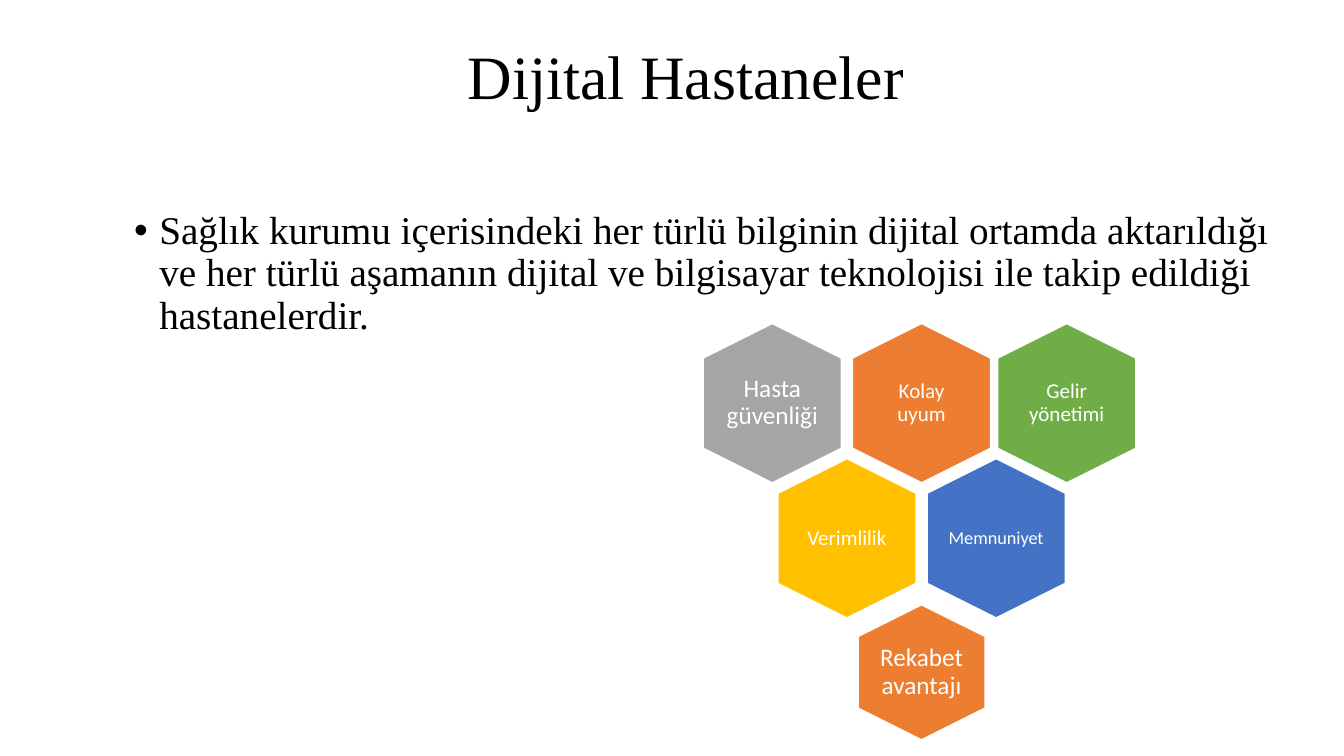
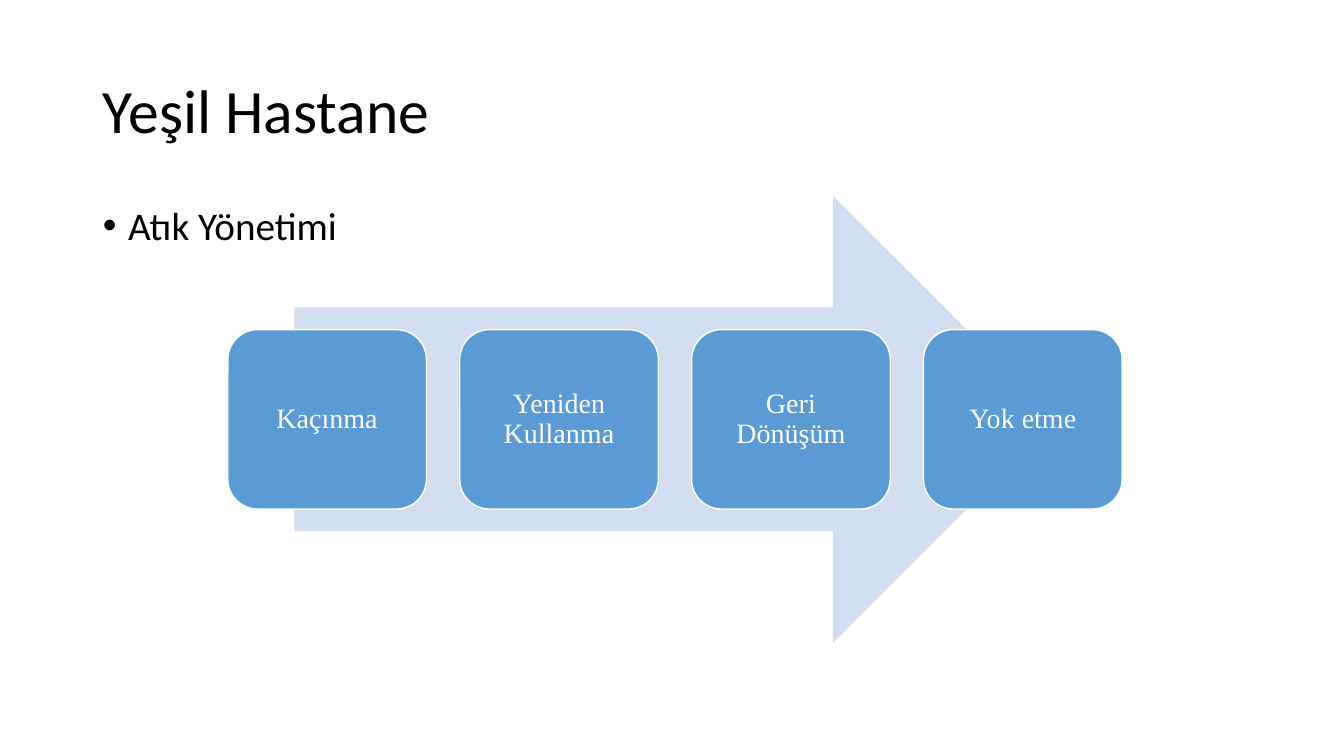
import pptx
import pptx.dml.color
import pptx.enum.shapes
import pptx.enum.text
import pptx.util

Inches = pptx.util.Inches
Pt = pptx.util.Pt
RGBColor = pptx.dml.color.RGBColor
Shape = pptx.enum.shapes.MSO_SHAPE
Align = pptx.enum.text.PP_ALIGN
Anchor = pptx.enum.text.MSO_ANCHOR

BLACK = RGBColor(0x00, 0x00, 0x00)
WHITE = RGBColor(0xFF, 0xFF, 0xFF)
ORANGE = RGBColor(0xED, 0x7D, 0x31)
GRAY = RGBColor(0xA5, 0xA5, 0xA5)
YELLOW = RGBColor(0xFF, 0xC0, 0x00)
BLUE = RGBColor(0x44, 0x72, 0xC4)
GREEN = RGBColor(0x70, 0xAD, 0x47)
STEP_BLUE = RGBColor(0x5B, 0x9B, 0xD5)
PALE_BLUE = RGBColor(0xD2, 0xDE, 0xEF)

SANS = "Calibri"
SERIF = "Times New Roman"

TITLE_SIZE = 44
BODY_SIZE = 28
TITLE_AND_CONTENT = 1


def set_attributes(target, values):
    for name, value in values.items():
        setattr(target, name, value)


class Deck:
    """Holds the shared style and the slide being filled."""

    def __init__(self):
        self.presentation = pptx.Presentation()
        self.presentation.slide_width = Inches(13.33)
        self.presentation.slide_height = Inches(7.5)
        self.slide = None

    def add_slide(self):
        layout = self.presentation.slide_layouts[TITLE_AND_CONTENT]
        self.slide = self.presentation.slides.add_slide(layout)

    def set_text(self, shape, text, font, size, color, align, anchor, inset=None):
        frame = shape.text_frame
        set_attributes(frame, {
            "text": text,
            "word_wrap": True,
            "auto_size": pptx.enum.text.MSO_AUTO_SIZE.NONE,
            "vertical_anchor": anchor,
        })
        if inset is not None:
            for side in ("left", "top", "right", "bottom"):
                setattr(frame, f"margin_{side}", Inches(inset))
        paragraph = frame.paragraphs[0]
        set_attributes(paragraph, {"alignment": align, "line_spacing": 0.9})
        set_attributes(paragraph.runs[0].font, {"name": font, "size": Pt(size)})
        paragraph.runs[0].font.color.rgb = color
        return paragraph

    def place(self, shape, left, top, width, height):
        set_attributes(shape, {
            "left": Inches(left), "top": Inches(top),
            "width": Inches(width), "height": Inches(height),
        })

    def title(self, text, font, *box):
        title = self.slide.shapes.title
        self.place(title, *box)
        self.set_text(title, text, font, TITLE_SIZE, BLACK, Align.LEFT, Anchor.MIDDLE)

    def bullet(self, text, font, *box):
        body = self.slide.placeholders[1]
        self.place(body, *box)
        paragraph = self.set_text(body, text, font, BODY_SIZE, BLACK, Align.LEFT, Anchor.TOP)
        paragraph.space_before = Pt(10)
        properties = paragraph._p.get_or_add_pPr()
        properties.set("marL", str(Inches(0.25)))
        properties.set("indent", str(Inches(-0.25)))

    def shape(self, kind, color, left, top, width, height, outlined=True):
        shape = self.slide.shapes.add_shape(
            kind, Inches(left), Inches(top), Inches(width), Inches(height))
        shape.shadow.inherit = False
        shape.fill.solid()
        shape.fill.fore_color.rgb = color
        if outlined:
            shape.line.color.rgb = WHITE
            shape.line.width = Pt(1)
        else:
            shape.line.fill.background()
        return shape

    def hexagon(self, text, size, color, center_x, center_y, length=1.58, breadth=1.37):
        """Draw a hexagon standing on its point, with an upright label over it."""
        hexagon = self.shape(Shape.HEXAGON, color, center_x - length / 2,
                             center_y - breadth / 2, length, breadth)
        hexagon.rotation = 90
        width, height = 0.94, 1.08
        label = self.slide.shapes.add_textbox(
            Inches(center_x - width / 2), Inches(center_y - height / 2),
            Inches(width), Inches(height))
        self.set_text(label, text, SANS, size, WHITE, Align.CENTER, Anchor.MIDDLE, 0)

    def step(self, text, *box):
        step = self.shape(Shape.ROUNDED_RECTANGLE, STEP_BLUE, *box)
        self.set_text(step, text, SERIF, 20, WHITE, Align.CENTER, Anchor.MIDDLE, 0.1)


def digital_hospitals(deck):
    deck.add_slide()
    deck.title("Dijital Hastaneler", SERIF, 4.54, 0.2, 4.88, 1.18)
    deck.bullet(
        "Sağlık kurumu içerisindeki her türlü bilginin dijital ortamda aktarıldığı "
        "ve her türlü aşamanın dijital ve bilgisayar teknolojisi ile takip edildiği "
        "hastanelerdir.", SERIF, 1.23, 2.04, 11.5, 4.76)

    middle, pitch = 9.14, 1.48
    top_row, second_row, bottom_row = 4.0, 5.34, 6.67
    deck.hexagon("Kolay uyum", 15, ORANGE, middle, top_row)
    deck.hexagon("Hasta güvenliği", 18, GRAY, middle - pitch, top_row)
    deck.hexagon("Verimlilik", 15, YELLOW, middle - pitch / 2, second_row)
    deck.hexagon("Memnuniyet", 13, BLUE, middle + pitch / 2, second_row)
    deck.hexagon("Gelir yönetimi", 15, GREEN, 10.58, top_row)
    deck.hexagon("Rekabet avantajı", 18, ORANGE, middle, bottom_row, 1.34, 1.26)


def green_hospital(deck):
    deck.add_slide()
    deck.title("Yeşil Hastane", SANS, 0.92, 0.4, 11.5, 1.45)
    deck.bullet("Atık Yönetimi", SANS, 0.92, 2, 11.5, 4.76)
    deck.shape(Shape.RIGHT_ARROW, PALE_BLUE, 2.92, 1.94, 7.56, 4.44, outlined=False)

    width, gap = 1.97, 0.33
    steps = ("Kaçınma", "Yeniden Kullanma", "Geri Dönüşüm", "Yok etme")
    for index, text in enumerate(steps):
        deck.step(text, 2.26 + index * (width + gap), 3.27, width, 1.78)


def main():
    deck = Deck()
    digital_hospitals(deck)
    green_hospital(deck)
    deck.presentation.save("out.pptx")


if __name__ == "__main__":
    main()
